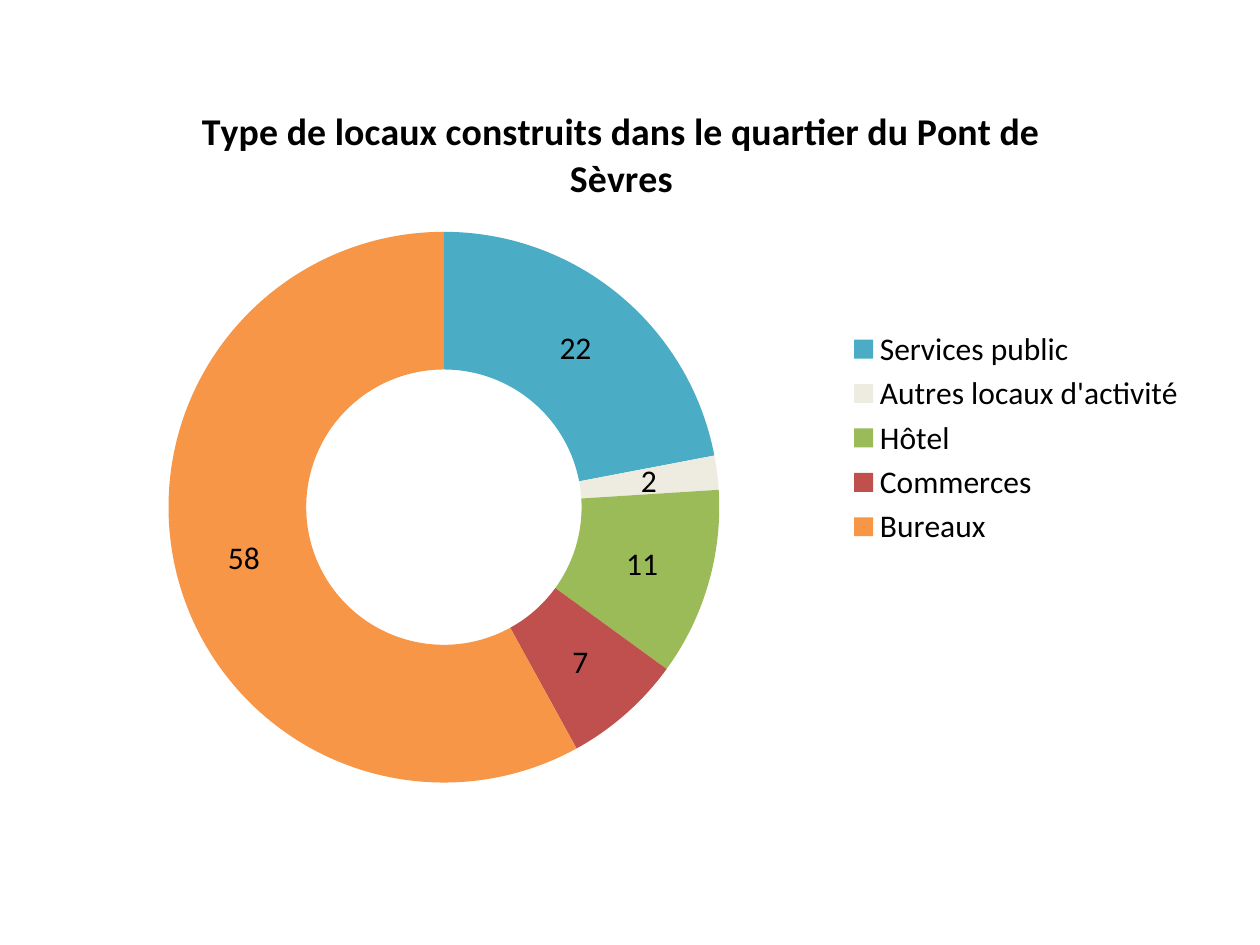
from pptx import Presentation
from pptx.chart.data import CategoryChartData
from pptx.dml.color import RGBColor
from pptx.enum.chart import XL_CHART_TYPE, XL_LEGEND_POSITION
from pptx.util import Emu, Pt

DOUGHNUT = XL_CHART_TYPE.DOUGHNUT
LEGEND_RIGHT = XL_LEGEND_POSITION.RIGHT

PX = 914400 // 126
FONT = "Calibri"
BLACK = RGBColor(0x00, 0x00, 0x00)
TEAL = RGBColor(0x4B, 0xAC, 0xC6)
CREAM = RGBColor(0xEE, 0xEC, 0xE1)
GREEN = RGBColor(0x9B, 0xBB, 0x59)
RED = RGBColor(0xC0, 0x50, 0x4D)
ORANGE = RGBColor(0xF7, 0x96, 0x46)

TITLE = "Type de locaux construits dans le quartier du Pont de Sèvres"
PREMISES = [
    ("Services public", 22, TEAL),
    ("Autres locaux d'activité", 2, CREAM),
    ("Hôtel", 11, GREEN),
    ("Commerces", 7, RED),
    ("Bureaux", 58, ORANGE),
]


def px(length):
    return Emu(length * PX)


def style_font(font, size=18, bold=False, color=BLACK):
    font.name = FONT
    font.size = Pt(size)
    font.bold = bold
    font.color.rgb = color


def write_text(frame, text, **style):
    frame.text = text
    style_font(frame.paragraphs[0].runs[0].font, **style)


def add_doughnut(slide, left, top, width, height):
    data = CategoryChartData()
    data.categories = [name for name, _, _ in PREMISES]
    data.add_series(TITLE, [share for _, share, _ in PREMISES])
    chart = slide.shapes.add_chart(
        DOUGHNUT, px(left), px(top), px(width), px(height), data
    ).chart
    style_font(chart.font)
    chart.has_title = True
    write_text(chart.chart_title.text_frame, TITLE, size=21.6, bold=True)
    chart.chart_title.include_in_layout = False
    return chart


def format_ring(plot):
    plot.vary_by_categories = True
    for index, (_, _, color) in enumerate(PREMISES):
        fill = plot.series[0].points[index].format.fill
        fill.solid()
        fill.fore_color.rgb = color
    plot.has_data_labels = True
    labels = plot.data_labels
    labels.show_value = True
    labels.show_percentage = False
    style_font(labels.font)


def add_legend(chart):
    chart.has_legend = True
    chart.legend.position = LEGEND_RIGHT
    chart.legend.include_in_layout = False
    style_font(chart.legend.font)


def main():
    prs = Presentation()
    prs.slide_width, prs.slide_height = px(1260), px(945)
    slide = prs.slides.add_slide(prs.slide_layouts[6])
    chart = add_doughnut(slide, 44, 76, 1155, 724)
    format_ring(chart.plots[0])
    add_legend(chart)
    prs.save("out.pptx")


if __name__ == "__main__":
    main()
